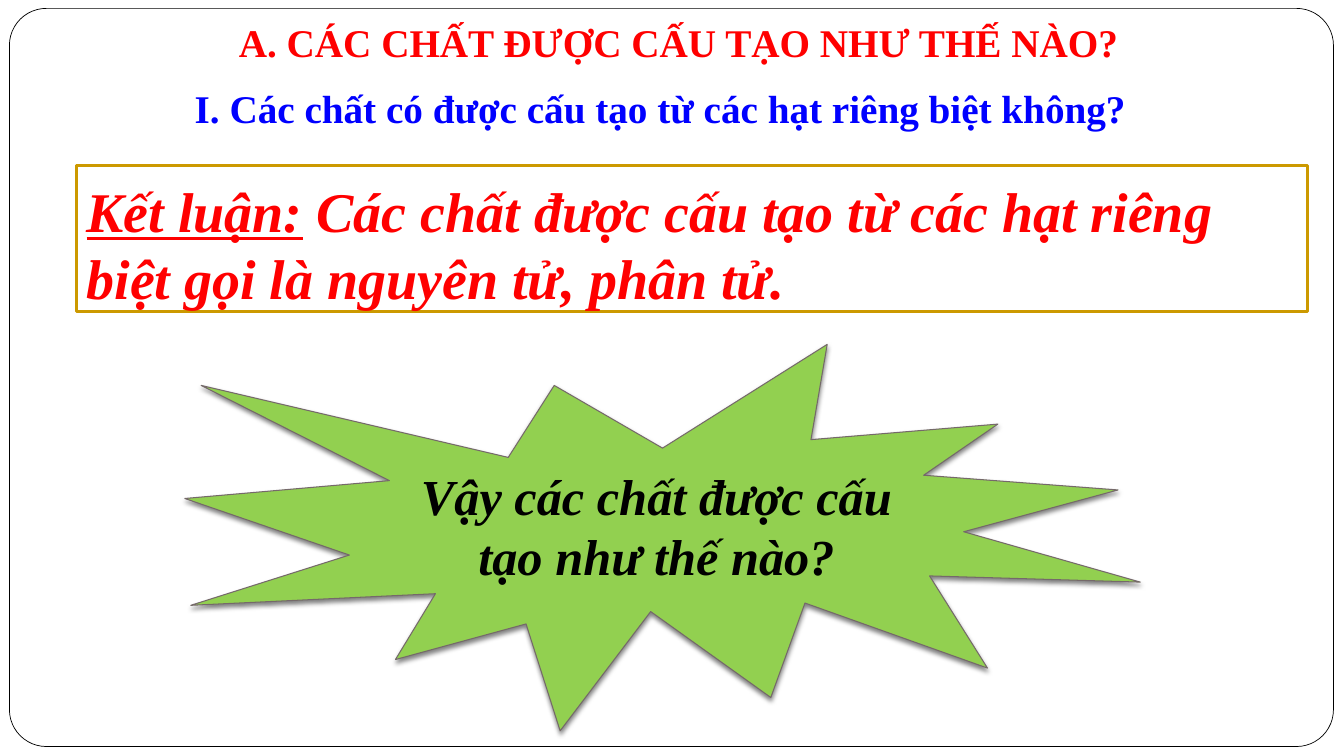
from lxml.etree import SubElement
from pptx import Presentation
from pptx.dml.color import RGBColor
from pptx.enum.shapes import MSO_SHAPE
from pptx.enum.text import MSO_ANCHOR, MSO_AUTO_SIZE, PP_ALIGN
from pptx.oxml.ns import qn
from pptx.util import Pt

PX = 9525
FONT = "Times New Roman"
RED = RGBColor(0xFF, 0x00, 0x00)
BLUE = RGBColor(0x00, 0x00, 0xFF)
BLACK = RGBColor(0x00, 0x00, 0x00)
WHITE = RGBColor(0xFF, 0xFF, 0xFF)
GOLD = RGBColor(0xCC, 0x99, 0x00)
GREEN = RGBColor(0x92, 0xD0, 0x50)
GREY = RGBColor(0x75, 0x69, 0x6A)


def px(*lengths):
    return [n * PX for n in lengths]


def write(sp, *runs, size, color, italic=False, align=PP_ALIGN.LEFT,
          anchor=MSO_ANCHOR.TOP, top=5, bottom=5):
    tf = sp.text_frame
    tf.word_wrap = True
    tf.auto_size = MSO_AUTO_SIZE.NONE
    tf.vertical_anchor = anchor
    tf.margin_top, tf.margin_bottom = px(top, bottom)
    p = tf.paragraphs[0]
    p.alignment = align
    for text, underline in runs:
        r = p.add_run()
        r.text = text
        f = r.font
        f.name, f.size, f.bold, f.italic = FONT, Pt(size), True, italic
        f.underline = underline
        f.color.rgb = color


def add_box(s, kind, box, fill, line, width):
    sp = s.shapes.add_shape(kind, *px(*box))
    sp.shadow.inherit = False
    if fill is None:
        sp.fill.background()
    else:
        sp.fill.solid()
        sp.fill.fore_color.rgb = fill
    sp.line.color.rgb = line
    sp.line.width = Pt(width)
    return sp


def add_shadow(sp, color, blur, distance, alpha):
    effects = sp._element.spPr.find(qn("a:effectLst"))
    shadow = SubElement(effects, qn("a:outerShdw"), blurRad=str(Pt(blur)),
                        dist=str(Pt(distance)), dir="5400000", rotWithShape="0")
    clr = SubElement(shadow, qn("a:srgbClr"), val=str(color))
    SubElement(clr, qn("a:alpha"), val=str(alpha * 1000))


def add_frame(s, box):
    sp = add_box(s, MSO_SHAPE.ROUNDED_RECTANGLE, box, WHITE, BLACK, 0.5)
    sp.adjustments[0] = 0.05
    s.shapes._spTree.insert(2, sp._element)


def add_headings(s, box):
    x, y, w, h = box
    title = s.shapes.title
    title.left, title.top, title.width, title.height = px(x, y, w, h)
    write(title, ("A. CÁC CHẤT ĐƯỢC CẤU TẠO NHƯ THẾ NÀO?", False), size=28,
          color=RED, align=PP_ALIGN.CENTER, anchor=MSO_ANCHOR.BOTTOM, bottom=10)
    section = s.shapes.add_textbox(*px(x + 10, y + h, w - 32, 54))
    write(section, ("I. Các chất có được cấu tạo từ các hạt riêng biệt không?", False),
          size=28, color=BLUE, top=8)


def add_conclusion(s, box):
    sp = add_box(s, MSO_SHAPE.RECTANGLE, box, None, GOLD, 2.25)
    write(sp, ("Kết luận:", True),
          (" Các chất được cấu tạo từ các hạt riêng biệt gọi là nguyên tử, phân tử.", False),
          size=40, color=RED, italic=True, top=10)


def add_question(s, box):
    sp = add_box(s, MSO_SHAPE.EXPLOSION1, box, GREEN, GREY, 0.75)
    add_shadow(sp, BLACK, blur=3, distance=2, alpha=50)
    write(sp, ("Vậy các chất được cấu tạo như thế nào?", False), size=36,
          color=BLACK, italic=True, align=PP_ALIGN.CENTER, anchor=MSO_ANCHOR.MIDDLE)


def main():
    prs = Presentation()
    prs.slide_width, prs.slide_height = px(1280, 720)
    s = prs.slides.add_slide(prs.slide_layouts[5])
    add_frame(s, (9, 8, 1261, 703))
    add_headings(s, (166, 8, 960, 64))
    add_conclusion(s, (73, 158, 1172, 139))
    add_question(s, (176, 328, 910, 368))
    prs.save("out.pptx")


if __name__ == "__main__":
    main()
